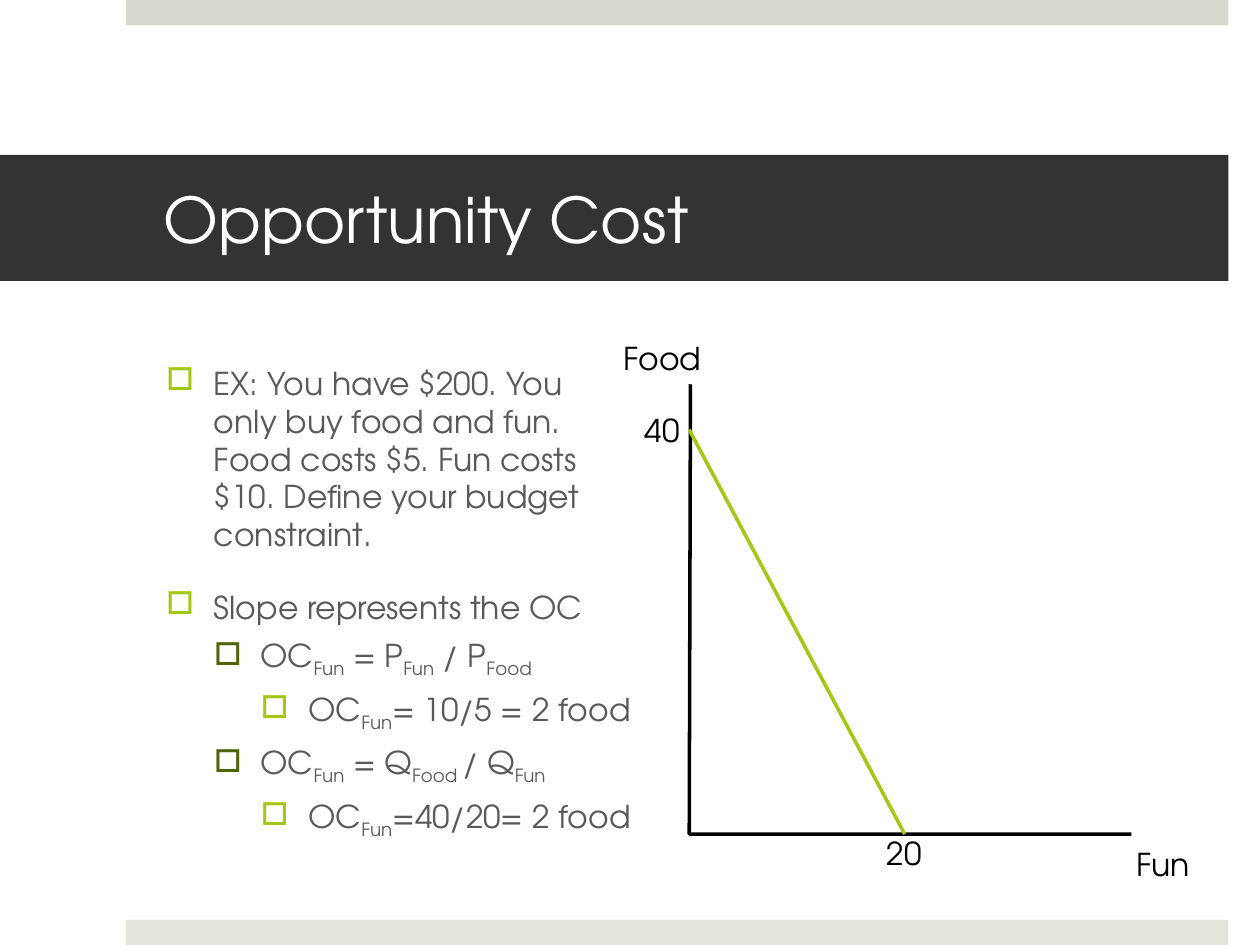
from pptx import Presentation
from pptx.dml.color import RGBColor
from pptx.enum import shapes, text
from pptx.oxml import ns, xmlchemy
from pptx.util import Inches, Pt

FONT = "TeX Gyre Adventor"
WHITE = RGBColor(0xFF, 0xFF, 0xFF)
BLACK = RGBColor(0, 0, 0)
DARK = RGBColor(0x33, 0x33, 0x33)
GRAY = RGBColor(0x59, 0x59, 0x59)
LIME = RGBColor(0xA2, 0xC8, 0x16)
OLIVE = RGBColor(0x51, 0x64, 0x0B)
TOP = RGBColor(0xD6, 0xD9, 0xCD)
BASE = RGBColor(0xE4, 0xE6, 0xDE)

TITLE = "Opportunity Cost"
BANDS = [(0, TOP), (7.3, BASE)]
# Level and text; the words between underscores are subscripts.
POINTS = [
    (0, "EX: You have $200. You only buy food and fun. Food costs $5. "
        "Fun costs $10. Define your budget constraint."),
    (0, "Slope represents the OC"),
    (1, "OC_Fun_ = P_Fun_ / P_Food_"),
    (2, "OC_Fun_= 10/5 = 2 food"),
    (1, "OC_Fun_ = Q_Food _/ Q_Fun_"),
    (2, "OC_Fun_=40/20= 2 food"),
]
# Left indent, hanging indent, space before, bullet colour
LEVELS = [(0.38, 0.38, 20, LIME), (0.75, 0.37, 6, OLIVE), (1.13, 0.38, 6, LIME)]
AXES = [(5.48, 3.05), (5.47, 6.62), (8.98, 6.62)]
BUDGET = [(5.47, 3.41), (7.18, 6.62)]
LABELS = [
    ("Food", 4.85, 2.64, 0.83),
    ("Fun", 8.92, 6.66, 0.63),
    ("40", 5.02, 3.21, 0.48),
    ("20", 6.94, 6.57, 0.48),
]


def write(para, words, size=18, color=BLACK):
    for i, part in enumerate(words.split("_")):
        if not part:
            continue
        run = para.add_run()
        run.text = part
        run.font.name = FONT
        run.font.size = Pt(size)
        run.font.color.rgb = color
        if i % 2:
            run.font._element.set("baseline", "-25000")


def bullet(para, level):
    left, hang, space, color = LEVELS[level]
    para.level = level
    para.space_before = Pt(space)
    props = para._p.get_or_add_pPr()
    props.set("marL", str(Inches(left)))
    props.set("indent", str(-Inches(hang)))
    tint = xmlchemy.OxmlElement("a:buClr")
    xmlchemy.OxmlElement("a:srgbClr")
    shade = xmlchemy.OxmlElement("a:srgbClr")
    shade.set("val", str(color))
    tint.append(shade)
    mark = xmlchemy.OxmlElement("a:buChar")
    mark.set("char", "□")
    props.extend([tint, mark])


def box(slide, left, top, width, height, wrap=True):
    frame = slide.shapes.add_textbox(
        *map(Inches, (left, top, width, height))).text_frame
    frame.word_wrap = wrap
    return frame


def draw_title(slide):
    title = slide.shapes.title
    title.left, title.top = Inches(0), Inches(1.23)
    title.width, title.height = Inches(9.75), Inches(1)
    title.fill.solid()
    title.fill.fore_color.rgb = DARK
    frame = title.text_frame
    frame.auto_size = text.MSO_AUTO_SIZE.NONE
    frame.vertical_anchor = text.MSO_ANCHOR.MIDDLE
    frame.margin_left, frame.margin_right = Inches(1.3), Inches(0.3)
    para = frame.paragraphs[0]
    para.alignment = text.PP_ALIGN.LEFT
    write(para, TITLE, size=36, color=WHITE)


def draw_bands(slide):
    for top, color in BANDS:
        band = slide.shapes.add_shape(
            shapes.MSO_SHAPE.RECTANGLE,
            Inches(1), Inches(top), Inches(8.75), Inches(0.2))
        band.shadow.inherit = False
        band.fill.solid()
        band.fill.fore_color.rgb = color
        band.line.fill.background()


def draw_points(slide):
    frame = box(slide, 1.22, 2.84, 3.9, 4.03)
    for i, (level, words) in enumerate(POINTS):
        para = frame.add_paragraph() if i else frame.paragraphs[0]
        bullet(para, level)
        write(para, words, color=GRAY)


def draw_graph(slide):
    start, *rest = [(Inches(x), Inches(y)) for x, y in AXES]
    path = slide.shapes.build_freeform(*start)
    path.add_line_segments(rest, close=False)
    axes = path.convert_to_shape()
    axes.shadow.inherit = False
    axes.fill.background()

    ends = [Inches(n) for point in BUDGET for n in point]
    budget = slide.shapes.add_connector(shapes.MSO_CONNECTOR.STRAIGHT, *ends)
    budget._element.find(ns.qn("p:spPr")).append(
        xmlchemy.OxmlElement("a:effectLst"))
    for item, color in ((axes, BLACK), (budget, LIME)):
        item.line.color.rgb = color
        item.line.width = Pt(2)

    for words, left, top, width in LABELS:
        frame = box(slide, left, top, width, 0.4, wrap=False)
        write(frame.paragraphs[0], words)


def main():
    deck = Presentation()
    deck.slide_width, deck.slide_height = Inches(10), Inches(7.5)
    slide = deck.slides.add_slide(deck.slide_layouts[5])
    draw_bands(slide)
    draw_title(slide)
    draw_points(slide)
    draw_graph(slide)
    deck.save("out.pptx")


if __name__ == "__main__":
    main()
